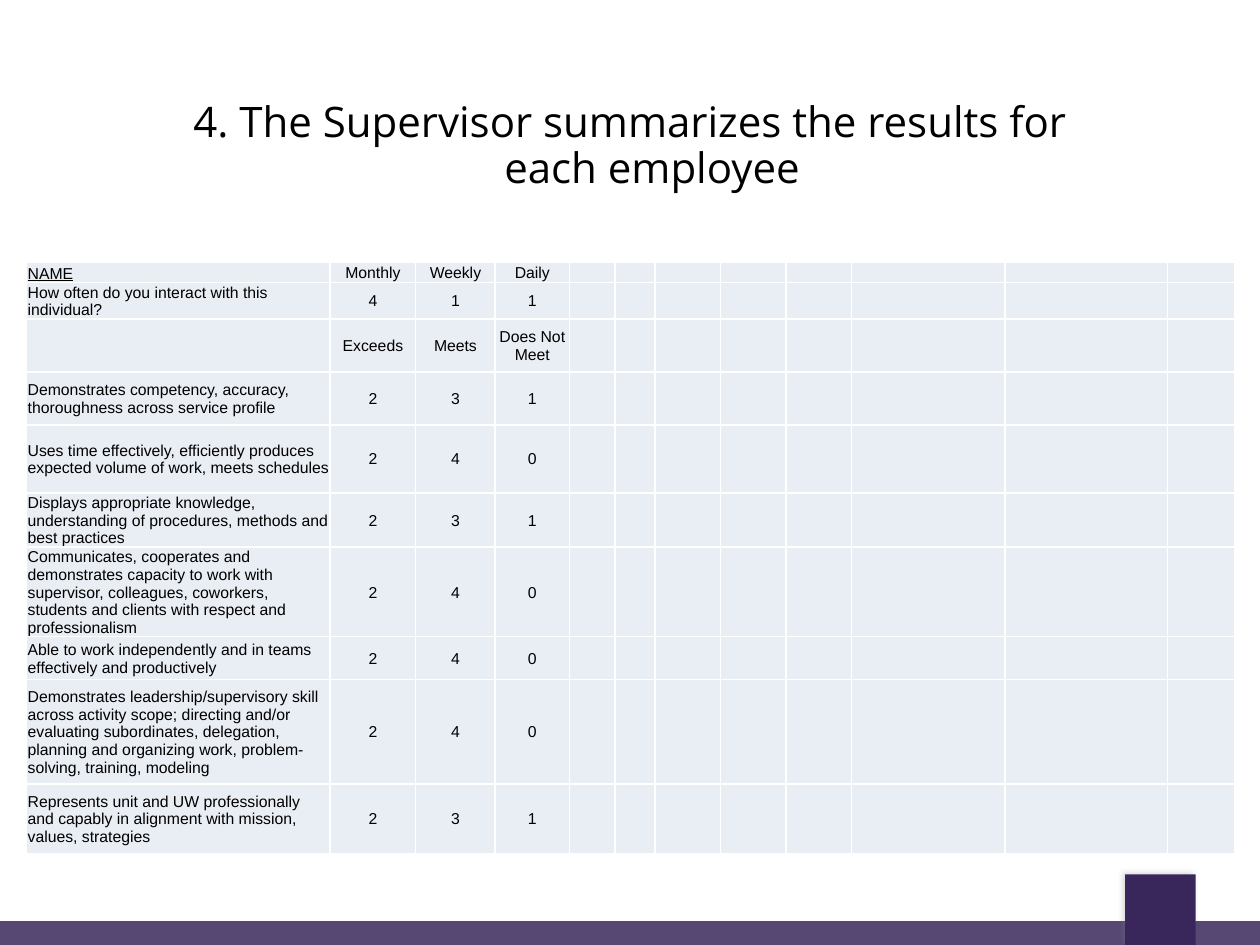
from dataclasses import dataclass

from lxml import etree
from pptx import Presentation
from pptx.dml.color import RGBColor
from pptx.enum.shapes import MSO_SHAPE
from pptx.enum.text import MSO_ANCHOR, PP_ALIGN
from pptx.oxml.ns import qn
from pptx.util import Emu, Inches, Pt

RECTANGLE = MSO_SHAPE.RECTANGLE
MIDDLE, BOTTOM = MSO_ANCHOR.MIDDLE, MSO_ANCHOR.BOTTOM
LEFT, CENTER = PP_ALIGN.LEFT, PP_ALIGN.CENTER

PURPLE = RGBColor(0x39, 0x27, 0x5B)
CELL_FILL = RGBColor(0xE9, 0xED, 0xF4)
BLACK = RGBColor(0, 0, 0)
WHITE = RGBColor(0xFF, 0xFF, 0xFF)
SHADOW_GRAY = RGBColor(0x80, 0x80, 0x80)

SLIDE_WIDTH, SLIDE_HEIGHT = Inches(10), Inches(7.5)
COLUMN_WIDTHS = [2.41, 0.68, 0.63, 0.59, 0.36, 0.32, 0.52, 0.52, 0.52, 1.22, 1.29, 0.53]


@dataclass(frozen=True)
class Box:
    """Position and size in percent of the slide."""
    left: float
    top: float
    width: float
    height: float

    def lengths(self) -> tuple:
        return (Emu(int(SLIDE_WIDTH * self.left / 100)),
                Emu(int(SLIDE_HEIGHT * self.top / 100)),
                Emu(int(SLIDE_WIDTH * self.width / 100)),
                Emu(int(SLIDE_HEIGHT * self.height / 100)))


@dataclass(frozen=True)
class SurveyRow:
    height: float
    label: str
    answers: tuple


FOOTER_BAR = Box(0, 97.47, 100, 2.53)
FOOTER_SQUARE = Box(89.3, 92.53, 5.6, 7.47)
TITLE_BOX = Box(5, 7.73, 90, 15.6)
TABLE_BOX = Box(2.1, 27.73, 95.8, 62.67)

TITLE_LINES = ["4. The Supervisor summarizes the results for", "each employee"]
SURVEY_ROWS = [
    SurveyRow(0.15, "NAME", ("Monthly", "Weekly", "Daily")),
    SurveyRow(0.29, "How often do you interact with this individual?", ("4", "1", "1")),
    SurveyRow(0.42, "", ("Exceeds", "Meets", "Does Not Meet")),
    SurveyRow(0.42, "Demonstrates competency, accuracy, thoroughness across service profile",
              ("2", "3", "1")),
    SurveyRow(0.54, "Uses time effectively, efficiently produces expected volume of work, "
              "meets schedules", ("2", "4", "0")),
    SurveyRow(0.42, "Displays appropriate knowledge, understanding of procedures, methods "
              "and best practices", ("2", "3", "1")),
    SurveyRow(0.69, "Communicates, cooperates and demonstrates capacity to work with "
              "supervisor, colleagues, coworkers, students and clients with respect and "
              "professionalism", ("2", "4", "0")),
    SurveyRow(0.34, "Able to work independently and in teams effectively and productively",
              ("2", "4", "0")),
    SurveyRow(0.83, "Demonstrates leadership/supervisory skill across activity scope; "
              "directing and/or evaluating subordinates, delegation, planning and "
              "organizing work, problem-solving, training, modeling", ("2", "4", "0")),
    SurveyRow(0.55, "Represents unit and UW professionally and capably in alignment with "
              "mission, values, strategies", ("2", "3", "1")),
]


def add_color(parent, color: RGBColor, alpha: int):
    element = etree.SubElement(parent, qn("a:srgbClr"), val=str(color))
    etree.SubElement(element, qn("a:alpha"), val=str(alpha * 1000))


def add_footer_block(slide, box: Box):
    shape = slide.shapes.add_shape(RECTANGLE, *box.lengths())
    shape.shadow.inherit = False
    shape.fill.solid()
    shape.fill.fore_color.rgb = PURPLE
    shape.line.fill.background()
    return shape


def add_run(paragraph, text: str, size: float, font_name: str, underline: bool = False):
    run = paragraph.add_run()
    run.text = text
    run.font.size = Pt(size)
    run.font.name = font_name
    run.font.color.rgb = BLACK
    if underline:
        run.font.underline = True


def format_title(title):
    title.left, title.top, title.width, title.height = TITLE_BOX.lengths()
    frame = title.text_frame
    frame.word_wrap = True
    frame.vertical_anchor = MIDDLE
    for index, line in enumerate(TITLE_LINES):
        paragraph = frame.add_paragraph() if index else frame.paragraphs[0]
        paragraph.alignment = CENTER
        paragraph.line_spacing = 0.9
        paragraph.space_before = Pt(0)
        # The second line sits slightly to the right
        if index:
            paragraph._p.get_or_add_pPr().set("marL", str(Inches(0.35)))
        add_run(paragraph, line, 24, "Open Sans")


def format_cell(cell, text: str, alignment, anchor, underline: bool):
    cell.margin_left = cell.margin_top = cell.margin_right = Inches(0.01)
    cell.margin_bottom = 0
    cell.vertical_anchor = anchor
    properties = cell._tc.get_or_add_tcPr()
    for side in ("a:lnL", "a:lnR", "a:lnT", "a:lnB"):
        border = etree.SubElement(properties, qn(side), w=str(Pt(1)))
        fill = etree.SubElement(border, qn("a:solidFill"))
        etree.SubElement(fill, qn("a:srgbClr"), val=str(WHITE))
    cell.fill.solid()
    cell.fill.fore_color.rgb = CELL_FILL
    paragraph = cell.text_frame.paragraphs[0]
    paragraph.alignment = alignment
    if text:
        add_run(paragraph, text, 9, "Arial", underline)
    else:
        # Small type keeps empty cells from stretching their row
        etree.SubElement(paragraph._p, qn("a:endParaRPr"), sz="900")


def add_survey_table(slide):
    frame = slide.shapes.add_table(len(SURVEY_ROWS), len(COLUMN_WIDTHS), *TABLE_BOX.lengths())
    table = frame.table
    table.first_row = table.horz_banding = False
    for column, width in zip(table.columns, COLUMN_WIDTHS):
        column.width = Inches(width)
    for row_index, survey_row in enumerate(SURVEY_ROWS):
        table.rows[row_index].height = Inches(survey_row.height)
        texts = [survey_row.label, *survey_row.answers]
        texts += [""] * (len(COLUMN_WIDTHS) - len(texts))
        for column_index, text in enumerate(texts):
            is_name = row_index == column_index == 0
            format_cell(table.cell(row_index, column_index), text,
                        CENTER if column_index else LEFT,
                        BOTTOM if is_name else MIDDLE, is_name)


def main():
    presentation = Presentation()
    presentation.slide_width, presentation.slide_height = SLIDE_WIDTH, SLIDE_HEIGHT
    slide = presentation.slides.add_slide(presentation.slide_layouts[5])

    # Footer: translucent bar and a square with a soft shadow
    bar = add_footer_block(slide, FOOTER_BAR)
    bar_color = bar._element.spPr.find(qn("a:solidFill"))[0]
    etree.SubElement(bar_color, qn("a:alpha"), val="85000")
    square = add_footer_block(slide, FOOTER_SQUARE)
    effects = square._element.spPr.find(qn("a:effectLst"))
    shadow = etree.SubElement(effects, qn("a:outerShdw"), blurRad=str(Pt(3.1)),
                              dist=str(Pt(1.8)), dir=str(211 * 60000))
    add_color(shadow, SHADOW_GRAY, 27)

    # Title and survey summary
    format_title(slide.shapes.title)
    add_survey_table(slide)
    presentation.save("out.pptx")


if __name__ == "__main__":
    main()
